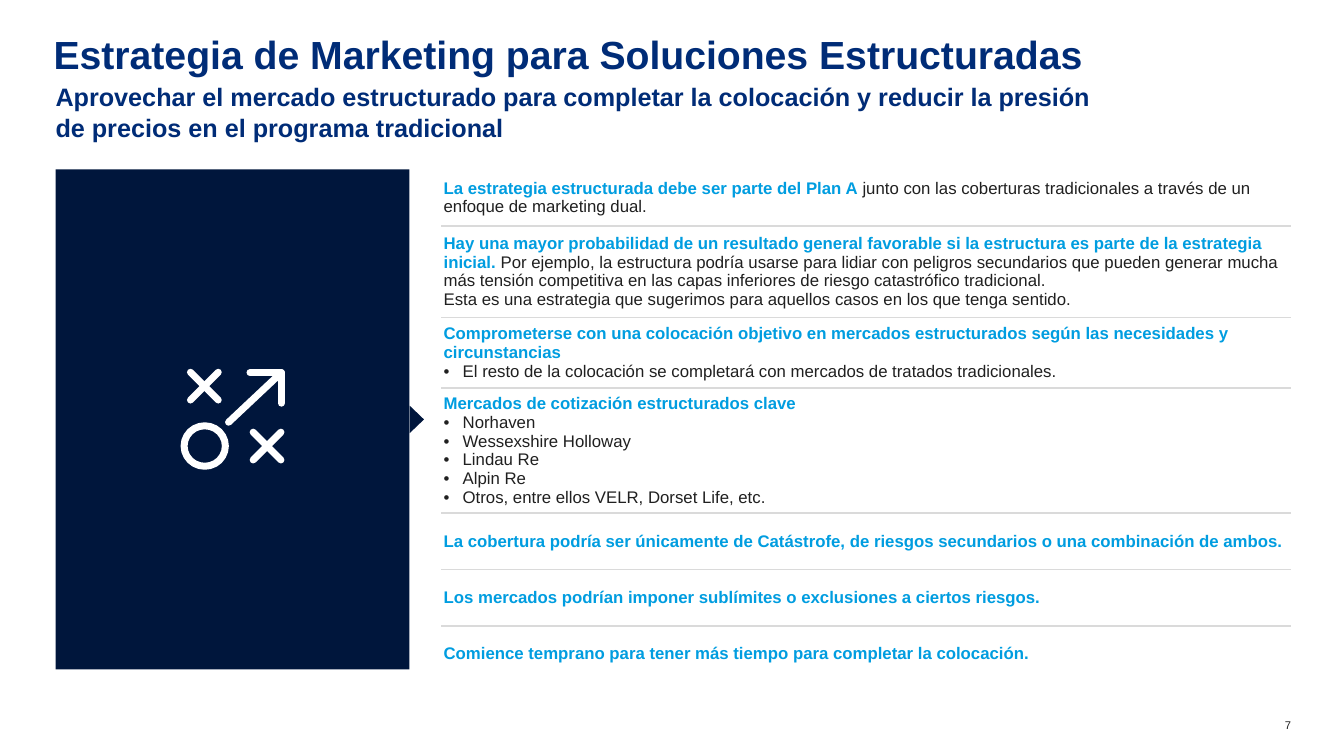
import pptx
import pptx.dml.color
import pptx.enum.shapes
import pptx.enum.text
import pptx.oxml
import pptx.oxml.ns
import pptx.util
from pptx.util import Cm

NAVY = pptx.dml.color.RGBColor(0x00, 0x2C, 0x77)
DARK_NAVY = pptx.dml.color.RGBColor(0x00, 0x16, 0x3C)
SKY = pptx.dml.color.RGBColor(0x00, 0x9D, 0xE0)
INK = pptx.dml.color.RGBColor(0x20, 0x20, 0x20)
WHITE = pptx.dml.color.RGBColor(0xFF, 0xFF, 0xFF)
RULE = pptx.dml.color.RGBColor(0xDA, 0xDA, 0xDA)
SHAPES = pptx.enum.shapes.MSO_SHAPE
NS = pptx.oxml.ns.nsdecls("a")

deck = pptx.Presentation()
deck.slide_width, deck.slide_height = Cm(33.87), Cm(19.05)
slide = deck.slides.add_slide(deck.slide_layouts[6])


def write(paragraph, text, size=12, color=INK, bold=False, align=None, spacing=None, bullet=False):
    if bullet:
        properties = paragraph._p.get_or_add_pPr()
        properties.set("marL", str(Cm(0.48)))
        properties.set("indent", str(-Cm(0.48)))
        properties.append(pptx.oxml.parse_xml(f'<a:buFont {NS} typeface="Arial"/>'))
        properties.append(pptx.oxml.parse_xml(f'<a:buChar {NS} char="•"/>'))
    if align is not None:
        paragraph.alignment = align
    if spacing is not None:
        paragraph.line_spacing = spacing
    run = paragraph.add_run()
    run.text = text
    run.font.name = "Arial"
    run.font.size = pptx.util.Pt(size)
    run.font.bold = bold
    run.font.color.rgb = color


heading = dict(color=NAVY, bold=True)
headers = [
    ((1.35, 0.99, 31.17, 1.37), ["Estrategia de Marketing para Soluciones Estructuradas"],
     dict(heading, size=28, spacing=0.8)),
    ((1.4, 2.06, 31.19, 0.89),
     ["Aprovechar el mercado estructurado para completar la colocación y reducir la presión",
      "de precios en el programa tradicional"], dict(heading, size=18)),
    ((31.75, 18.11, 0.79, 0.33), ["7"], dict(size=8, align=pptx.enum.text.PP_ALIGN.RIGHT)),
]
for place, lines, style in headers:
    frame = slide.shapes.add_textbox(*map(Cm, place)).text_frame
    frame.word_wrap = True
    frame.margin_left = frame.margin_right = frame.margin_top = frame.margin_bottom = 0
    for index, line in enumerate(lines):
        write(frame.add_paragraph() if index else frame.paragraphs[0], line, **style)

key = dict(color=SKY, bold=True)
item = dict(bullet=True)
recommendations = [
    (1.42, [[("La estrategia estructurada debe ser parte del Plan A ", key),
             ("junto con las coberturas tradicionales a través de un enfoque de marketing dual.", {})]]),
    (2.31, [[("Hay una mayor probabilidad de un resultado general favorable si la estructura es parte "
              "de la estrategia inicial. ", key),
             ("Por ejemplo, la estructura podría usarse para lidiar con peligros secundarios que pueden "
              "generar mucha más tensión competitiva en las capas inferiores de riesgo catastrófico "
              "tradicional.", {})],
            [("Esta es una estrategia que sugerimos para aquellos casos en los que tenga sentido.", {})]]),
    (1.78, [[("Comprometerse con una colocación objetivo en mercados estructurados según las necesidades "
              "y circunstancias", key)],
            [("El resto de la colocación se completará con mercados de tratados tradicionales.", item)]]),
    (2.82, [[("Mercados de cotización estructurados clave", key)],
            [("Norhaven", item)],
            [("Wessexshire Holloway", item)],
            [("Lindau Re", item)],
            [("Alpin Re", item)],
            [("Otros, entre ellos VELR, Dorset Life, etc.", item)]]),
    (1.42, [[("La cobertura podría ser únicamente de Catástrofe, de riesgos secundarios o una combinación "
              "de ambos.", key)]]),
    (1.42, [[("Los mercados podrían imponer sublímites o exclusiones a ciertos riesgos.", key)]]),
    (1.42, [[("Comience temprano para tener más tiempo para completar la colocación.", key)]]),
]
strategy = slide.shapes.add_table(len(recommendations), 1, Cm(11.13), Cm(4.27), Cm(21.39), Cm(12.59)).table
strategy.first_row = strategy.horz_banding = False
for row, (height, paragraphs) in enumerate(recommendations):
    strategy.rows[row].height = Cm(height)
    cell = strategy.cell(row, 0)
    cell.vertical_anchor = pptx.enum.text.MSO_ANCHOR.MIDDLE
    cell.margin_left = cell.margin_right = cell.margin_top = cell.margin_bottom = Cm(0.05)
    cell.fill.background()
    if row < len(recommendations) - 1:
        cell._tc.get_or_add_tcPr().insert(0, pptx.oxml.parse_xml(
            f'<a:lnB {NS} w="{pptx.util.Pt(1.5)}"><a:solidFill><a:srgbClr val="{RULE}"/></a:solidFill></a:lnB>'))
    for index, runs in enumerate(paragraphs):
        paragraph = cell.text_frame.add_paragraph() if index else cell.text_frame.paragraphs[0]
        for text, style in runs:
            write(paragraph, text, **style)

panel_parts = [
    (SHAPES.RECTANGLE, (1.4, 4.27, 8.92, 12.6), 0),
    (SHAPES.ISOSCELES_TRIANGLE, (10.16, 10.39, 0.69, 0.36), 90),
]
for kind, place, rotation in panel_parts:
    part = slide.shapes.add_shape(kind, *map(Cm, place))
    part.shadow.inherit = False
    part.rotation = rotation
    part.fill.solid()
    part.fill.fore_color.rgb = DARK_NAVY
    part.line.fill.background()

STROKE = pptx.util.Pt(5)
ring = slide.shapes.add_shape(SHAPES.OVAL, Cm(4.64), Cm(10.73), Cm(1.04), Cm(1.02))
ring.shadow.inherit = False
ring.fill.background()
ring.line.color.rgb = WHITE
ring.line.width = STROKE

strokes = [(5.76, 10.64, 7.09, 9.39), (6.3, 9.39, 7.09, 9.39), (7.09, 9.39, 7.09, 10.16)]
for left, top in [(4.8, 9.38), (6.38, 10.89)]:
    right, bottom = left + 0.7, top + 0.7
    strokes += [(left, top, right, bottom), (left, bottom, right, top)]
for ends in strokes:
    stroke = slide.shapes.add_connector(pptx.enum.shapes.MSO_CONNECTOR.STRAIGHT, *map(Cm, ends))
    stroke.line.color.rgb = WHITE
    stroke.line.width = STROKE
    stroke.line._get_or_add_ln().set("cap", "rnd")
    stroke._element.spPr.append(pptx.oxml.parse_xml(f"<a:effectLst {NS}/>"))

deck.save("out.pptx")
